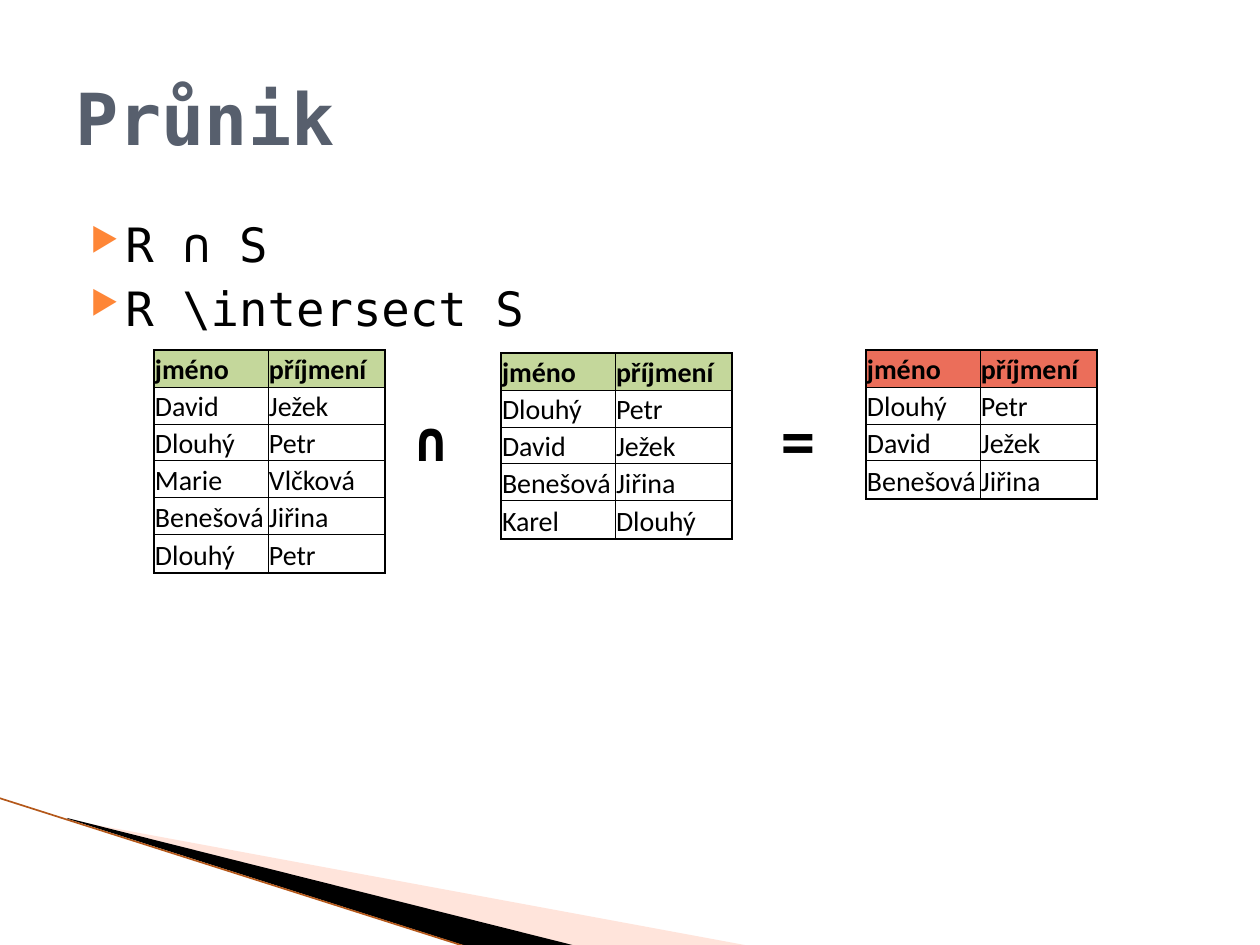
"""Builds a slide on the intersection of two relations."""
import pptx
import pptx.dml.color
import pptx.enum.shapes
import pptx.enum.text
import pptx.oxml
import pptx.oxml.ns
import pptx.util

SCALE = pptx.util.Inches(1) / 126
MONO = "DejaVu Sans Mono"
BLACK = "000000"
GREEN = "C4D79B"
RED = "EB6E5A"
NAMESPACE = pptx.oxml.ns.nsdecls("a")
MIDDLE = pptx.enum.text.MSO_ANCHOR.MIDDLE
TOP = pptx.enum.text.MSO_ANCHOR.TOP


def px(*lengths):
    return [round(length * SCALE) for length in lengths]


def colour(code):
    return pptx.dml.color.RGBColor.from_string(code)


deck = pptx.Presentation()
deck.slide_width, deck.slide_height = px(1260, 945)
page = deck.slides.add_slide(deck.slide_layouts[6])

wedges = [
    ("FFBCA5", 40, [(69, 820), (750, 946), (575, 946), (69, 819)]),
    (BLACK, 100, [(67, 818), (576, 946), (469, 947), (68, 819)]),
]
for fill, opacity, points in wedges:
    builder = page.shapes.build_freeform(*points[0], scale=SCALE)
    builder.add_line_segments(points[1:], close=True)
    wedge = builder.convert_to_shape()
    wedge.shadow.inherit = False
    wedge.fill.solid()
    wedge.fill.fore_color.rgb = colour(fill)
    wedge.line.fill.background()
    if opacity < 100:
        tint = wedge.fill._xPr.find(".//" + pptx.oxml.ns.qn("a:srgbClr"))
        tint.append(pptx.oxml.parse_xml(f'<a:alpha {NAMESPACE} val="{opacity * 1000}"/>'))

edge = page.shapes.add_connector(pptx.enum.shapes.MSO_CONNECTOR.STRAIGHT, *px(-1, 798, 467, 947))
edge.line.color.rgb = colour("B4581A")
edge.line.width = pptx.util.Pt(0.95)
edge._element.spPr.append(pptx.oxml.parse_xml(f"<a:effectLst {NAMESPACE}/>"))

texts = [
    ((63, 38, 1134, 158), MIDDLE, 41, True, "575F6D", ["Průnik"], False),
    ((63, 209, 1134, 619), TOP, 27, False, BLACK, ["R ∩ S", "R \\intersect S"], True),
    ((402, 399, 100, 81), TOP, 32, True, BLACK, ["∩"], False),
    ((769, 399, 100, 81), TOP, 32, True, BLACK, ["="], False),
]
for place, anchor, size, bold, ink, lines, bulleted in texts:
    box = page.shapes.add_textbox(*px(*place))
    frame = box.text_frame
    frame.word_wrap = True
    frame.vertical_anchor = anchor
    formats = {"name": MONO, "size": pptx.util.Pt(size), "bold": bold}
    for index, line in enumerate(lines):
        para = frame.paragraphs[0] if index == 0 else frame.add_paragraph()
        if index:
            para.space_before = pptx.util.Pt(4)
        if bulleted:
            properties = para._p.get_or_add_pPr()
            indent, hanging = px(50, -35)
            properties.set("marL", str(indent))
            properties.set("indent", str(hanging))
            for bullet in (
                f'<a:buClr {NAMESPACE}><a:srgbClr val="FE8637"/></a:buClr>',
                f'<a:buSzPct {NAMESPACE} val="68000"/>',
                f'<a:buChar {NAMESPACE} char="▶"/>',
            ):
                properties.append(pptx.oxml.parse_xml(bullet))
        span = para.add_run()
        span.text = line
        span.font.color.rgb = colour(ink)
        for name, value in formats.items():
            setattr(span.font, name, value)

header = ("jméno", "příjmení")
david = ("David", "Ježek")
dlouhy = ("Dlouhý", "Petr")
benesova = ("Benešová", "Jiřina")
relations = [
    (154, 350, GREEN, [header, david, dlouhy, ("Marie", "Vlčková"), benesova, dlouhy]),
    (501, 353, GREEN, [header, dlouhy, david, benesova, ("Karel", "Dlouhý")]),
    (866, 350, RED, [header, dlouhy, david, benesova]),
]
cell_formats = dict(zip(("margin_left", "margin_top", "margin_right", "margin_bottom"), px(1, 1, 1, 0)))
cell_formats["vertical_anchor"] = pptx.enum.text.MSO_ANCHOR.BOTTOM
for left, top, header_fill, rows in relations:
    last = len(rows) - 1
    holder = page.shapes.add_table(len(rows), 2, *px(left, top, 231, 37 * len(rows) + 1))
    table = holder.table
    table.first_row = table.horz_banding = False
    table.columns[0].width, table.columns[1].width = px(114, 117)
    for row, values in enumerate(rows):
        table.rows[row].height = px(38 if row == last else 37)[0]
        for column, value in enumerate(values):
            cell = table.cell(row, column)
            for name, setting in cell_formats.items():
                setattr(cell, name, setting)
            span = cell.text_frame.paragraphs[0].add_run()
            span.text = value
            span.font.color.rgb = colour(BLACK)
            formats = {"name": "Calibri", "size": pptx.util.Pt(16), "bold": row == 0}
            for name, setting in formats.items():
                setattr(span.font, name, setting)
            outer = {"L": column == 0, "R": column == 1, "T": row == 0, "B": row == last}
            for side, is_outer in outer.items():
                width = pptx.util.Pt(1 if is_outer else 0.5)
                cell._tc.get_or_add_tcPr().append(pptx.oxml.parse_xml(
                    f'<a:ln{side} {NAMESPACE} w="{width}"><a:solidFill>'
                    f'<a:srgbClr val="{BLACK}"/></a:solidFill></a:ln{side}>'))
            if row == 0:
                cell.fill.solid()
                cell.fill.fore_color.rgb = colour(header_fill)
            else:
                cell.fill.background()

deck.save("out.pptx")
